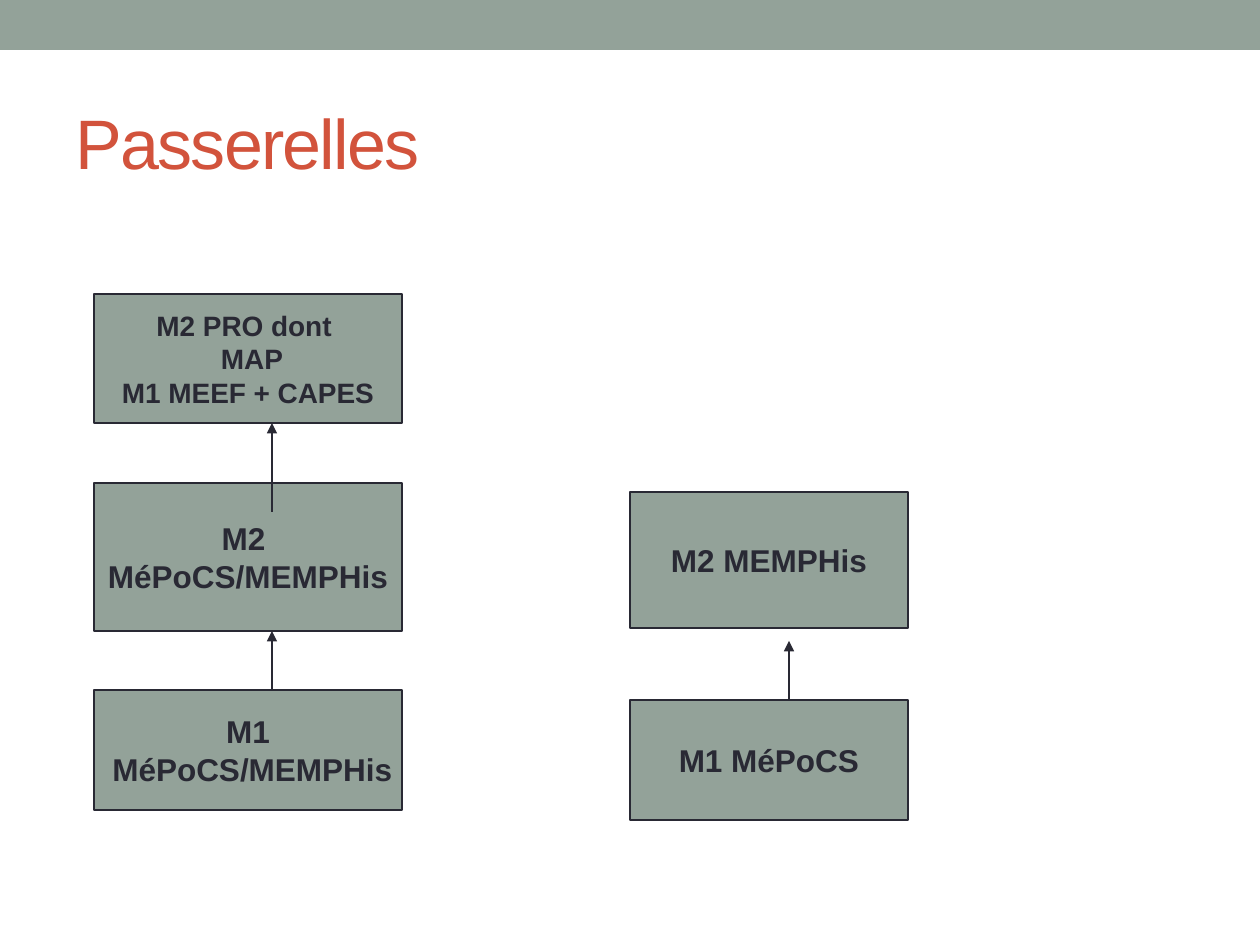
from pptx import Presentation
from pptx.dml.color import RGBColor
from pptx.enum.shapes import MSO_CONNECTOR as Connector, MSO_SHAPE as Shape
from pptx.enum.text import MSO_ANCHOR as Anchor, PP_ALIGN as Align
from pptx.oxml.ns import qn
from pptx.util import Pt
from lxml.etree import SubElement

EMU_PER_PX = 914400 / 126
SAGE, RUST, INK = "93A299", "D2533C", "292934"


def px(length):
    return round(length * EMU_PER_PX)


def color(hex_string):
    return RGBColor.from_string(hex_string)


class Deck:
    font_name = "Arial"
    line_width = Pt(0.75)

    def __init__(self, width, height):
        self.prs = Presentation()
        self.prs.slide_width, self.prs.slide_height = px(width), px(height)
        self.slide = self.prs.slides.add_slide(self.prs.slide_layouts[5])

    def set_font(self, paragraph, size, hex_string, bold=False):
        font = paragraph.font
        font.name, font.size, font.bold = self.font_name, Pt(size), bold
        font.color.rgb = color(hex_string)

    def title(self, text, left, top, width, height):
        title = self.slide.shapes.title
        title.left, title.top, title.width, title.height = map(px, (left, top, width, height))
        title.text_frame.text = text
        title.text_frame.vertical_anchor = Anchor.MIDDLE
        heading = title.text_frame.paragraphs[0]
        heading.alignment = Align.LEFT
        self.set_font(heading, 40, RUST)
        # Tighten the letters by one point
        heading.runs[0].font._element.set("spc", "-100")

    def rect(self, left, top, width, height):
        rect = self.slide.shapes.add_shape(Shape.RECTANGLE, *map(px, (left, top, width, height)))
        rect.shadow.inherit = False
        rect.fill.solid()
        rect.fill.fore_color.rgb = color(SAGE)
        rect.line.fill.background()
        return rect

    def box(self, text, left, top, width, height, size=18):
        box = self.rect(left, top, width, height)
        box.line.color.rgb = color(INK)
        box.line.width = self.line_width
        frame = box.text_frame
        frame.text = text
        frame.word_wrap = False
        frame.vertical_anchor = Anchor.MIDDLE
        for paragraph in frame.paragraphs:
            paragraph.alignment = Align.CENTER
            self.set_font(paragraph, size, INK, bold=True)

    def arrow_up(self, x, start, end):
        arrow = self.slide.shapes.add_connector(
            Connector.STRAIGHT, px(x), px(start), px(x), px(end))
        arrow.line.color.rgb = color(INK)
        arrow.line.width = self.line_width
        SubElement(arrow.line._get_or_add_ln(), qn("a:tailEnd"), type="triangle")
        SubElement(arrow._element.spPr, qn("a:effectLst"))


def main():
    deck = Deck(1260, 945)

    # Top band and title
    deck.rect(0, 0, 1260, 50)
    deck.title("Passerelles", 63, 73, 1134, 136)

    # Left pathway, from the final year down to the first
    left_pathway = [
        ("M2 PRO dont \n MAP\nM1 MEEF + CAPES", 294, 129, 16),
        ("M2 \nMéPoCS/MEMPHis", 483, 148, 18),
        ("M1\n MéPoCS/MEMPHis", 690, 120, 18),
    ]
    for stage, top, height, size in left_pathway:
        deck.box(stage, 94, top, 308, height, size)
    deck.arrow_up(272, 690, 631)
    deck.arrow_up(272, 512, 423)

    # Right pathway
    for stage, top, height in [("M2 MEMPHis", 492, 136), ("M1 MéPoCS", 700, 120)]:
        deck.box(stage, 630, top, 278, height)
    deck.arrow_up(789, 700, 641)

    deck.prs.save("out.pptx")


if __name__ == "__main__":
    main()
